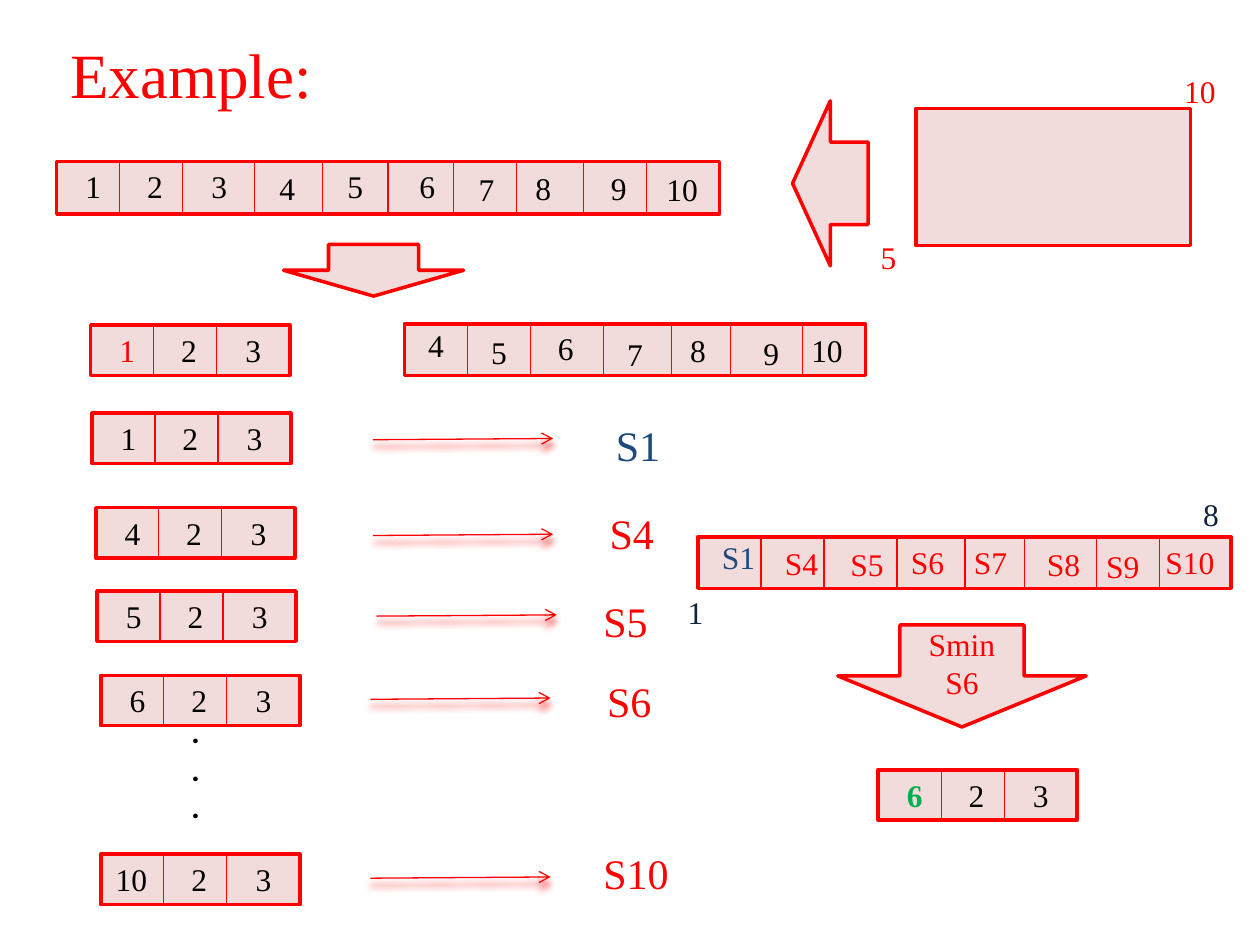
from lxml import etree
from pptx import Presentation
from pptx import util as u
from pptx.dml.color import RGBColor
from pptx.enum import shapes, text
from pptx.oxml import parse_xml
from pptx.oxml.ns import nsdecls, qn

RED, PINK, BLACK = "FF0000", "F2DCDB", "000000"
BLUE, NAVY, GREEN = "1F497D", "0F243E", "00B050"
SERIF = "Times New Roman"
SHAPE = shapes.MSO_SHAPE


def rgb(value):
    return RGBColor.from_string(value)


def style_text(para, size, color, bold=False, name=SERIF):
    font = para.font
    font.name, font.size, font.bold = name, u.Pt(size), bold
    font.color.rgb = rgb(color)


def add_label(page, words, left, top, color=BLACK, size=18, bold=False, name=SERIF):
    """Add an unwrapped text box that is sized to its lines."""
    lines = words.split("\n")
    width = 0.2 + max(map(len, lines)) * size / 130
    height = 0.1 + len(lines) * size / 60
    box = page.shapes.add_textbox(*map(u.Inches, (left, top, width, height)))
    frame = box.text_frame
    frame.word_wrap = False
    frame.auto_size = text.MSO_AUTO_SIZE.SHAPE_TO_FIT_TEXT
    frame.text = words
    for para in frame.paragraphs:
        style_text(para, size, color, bold, name)


def add_block(page, kind, left, top, width, height):
    block = page.shapes.add_shape(kind, *map(u.Inches, (left, top, width, height)))
    block.shadow.inherit = False
    block.fill.solid()
    block.fill.fore_color.rgb = rgb(PINK)
    block.line.color.rgb = rgb(RED)
    block.line.width = u.Pt(2)
    return block


def add_line(page, x1, y1, x2, y2):
    line = page.shapes.add_connector(
        shapes.MSO_CONNECTOR.STRAIGHT, *map(u.Inches, (x1, y1, x2, y2)))
    line.line.color.rgb = rgb(RED)
    line.line.width = u.Pt(0.75)
    etree.SubElement(line._element.spPr, qn("a:effectLst"))
    return line


def add_glowing_arrow(page, left, top):
    """Add an arrow with a soft red shadow below it."""
    arrow = add_line(page, left, top, left + 1.43, top - 0.01)
    properties = arrow._element.spPr
    etree.SubElement(properties.find(qn("a:ln")), qn("a:tailEnd"), type="arrow")
    properties.find(qn("a:effectLst")).append(parse_xml(
        f'<a:outerShdw {nsdecls("a")} blurRad="50800" dist="50800" dir="5400000"'
        f' algn="ctr" rotWithShape="0"><a:srgbClr val="{RED}"/></a:outerShdw>'))


def add_strip(page, left, top, width, height, dividers, labels):
    """Draw a vector; dividers and labels are placed from its top left corner."""
    add_block(page, SHAPE.RECTANGLE, left, top, width, height)
    for x in dividers:
        add_line(page, left + x, top - 0.01, left + x, top + height)
    for words, x, y, *style in labels:
        add_label(page, words, left + x, top + y, *style)


def add_triple(page, left, top, first, color=BLACK, bold=False):
    first_x = 0.13 if len(first) == 1 else 0.02
    add_strip(page, left, top, 1.58, 0.4, (0.5, 1), [
        (first, first_x, 0, color, 18, bold), ("2", 0.62, 0), ("3", 1.13, 0)])


def add_title(page, words):
    title = page.shapes.title
    title.left, title.top, title.width, title.height = map(
        u.Inches, (0.46, 0.23, 2.14, 0.71))
    frame = title.text_frame
    frame.text = words
    frame.word_wrap = False
    frame.vertical_anchor = text.MSO_ANCHOR.TOP
    para = frame.paragraphs[0]
    para.alignment = text.PP_ALIGN.LEFT
    style_text(para, 36, RED)


def add_source_matrix(page):
    add_block(page, SHAPE.RECTANGLE, 7.27, 0.86, 2.18, 1.09)
    add_label(page, "5", 6.89, 1.84, RED)
    add_label(page, "10", 9.3, 0.52, RED)
    add_block(page, SHAPE.LEFT_ARROW, 6.29, 0.8, 0.6, 1.31)


def add_vectors(page):
    places = [(0.13, 0), (0.62, 0), (1.13, 0), (1.67, 0.01), (2.21, 0),
              (2.78, 0), (3.25, 0.02), (3.7, 0.01), (4.3, 0.01), (4.74, 0.02)]
    add_strip(page, 0.45, 1.28, 5.26, 0.42,
              (0.5, 1, 1.57, 2.11, 2.63, 3.15, 3.65, 4.18, 4.68),
              [(str(n), *place) for n, place in enumerate(places, 1)])
    add_block(page, SHAPE.DOWN_ARROW, 2.25, 1.94, 1.43, 0.41)

    add_triple(page, 0.72, 2.58, "1", RED)
    places = [(0.09, -0.03), (0.59, 0.02), (1.12, -0.01), (1.67, 0.04),
              (2.17, 0.01), (2.75, 0.03), (3.13, 0.01)]
    add_strip(page, 3.21, 2.57, 3.66, 0.41, (0.5, 1, 1.58, 2.12, 2.59, 3.16),
              [(str(n), *place) for n, place in enumerate(places, 4)])


def add_scored_triples(page):
    rows = [  # first value, strip corner, arrow start, score corner
        ("1", (0.73, 3.28), (2.96, 3.49), (4.79, 3.28)),
        ("4", (0.76, 4.03), (2.96, 4.25), (4.74, 3.98)),
        ("5", (0.77, 4.69), (2.99, 4.89), (4.69, 4.68)),
        ("6", (0.8, 5.36), (2.94, 5.55), (4.72, 5.31)),
        ("10", (0.8, 6.78), (2.94, 6.97), (4.69, 6.68)),
    ]
    for first, strip, arrow, score in rows:
        add_triple(page, *strip, first)
        add_glowing_arrow(page, *arrow)
        add_label(page, "S" + first, *score, BLUE if first == "1" else RED, 24)
    add_label(page, ".\n.\n.", 1.42, 5.6, bold=True, name="Calibri")


def add_selection(page):
    scores = [("S1", 0.09, -0.04, BLUE), ("S4", 0.59, 0.01, RED),
              ("S5", 1.11, 0.02, RED), ("S6", 1.59, 0, RED),
              ("S7", 2.09, 0, RED), ("S8", 2.67, 0.02, RED),
              ("S9", 3.14, 0.03, RED), ("S10", 3.61, 0, RED)]
    add_strip(page, 5.54, 4.26, 4.23, 0.41,
              (0.5, 1, 1.58, 2.12, 2.59, 3.16, 3.66), scores)
    add_label(page, "1", 5.36, 4.66, NAVY)
    add_label(page, "8", 9.45, 3.88, NAVY)

    arrow = add_block(page, SHAPE.DOWN_ARROW, 6.65, 4.96, 1.97, 0.81)
    frame = arrow.text_frame
    frame.text = "Smin\nS6"
    frame.vertical_anchor = text.MSO_ANCHOR.MIDDLE
    for para in frame.paragraphs:
        para.alignment = text.PP_ALIGN.CENTER
        style_text(para, 18, RED)
    add_triple(page, 6.97, 6.11, "6", GREEN, bold=True)


def main():
    deck = Presentation()
    deck.slide_width, deck.slide_height = u.Inches(10), u.Inches(7.5)
    page = deck.slides.add_slide(deck.slide_layouts.get_by_name("Title Only"))
    add_title(page, "Example:")
    add_source_matrix(page)
    add_vectors(page)
    add_scored_triples(page)
    add_selection(page)
    deck.save("out.pptx")


if __name__ == "__main__":
    main()
